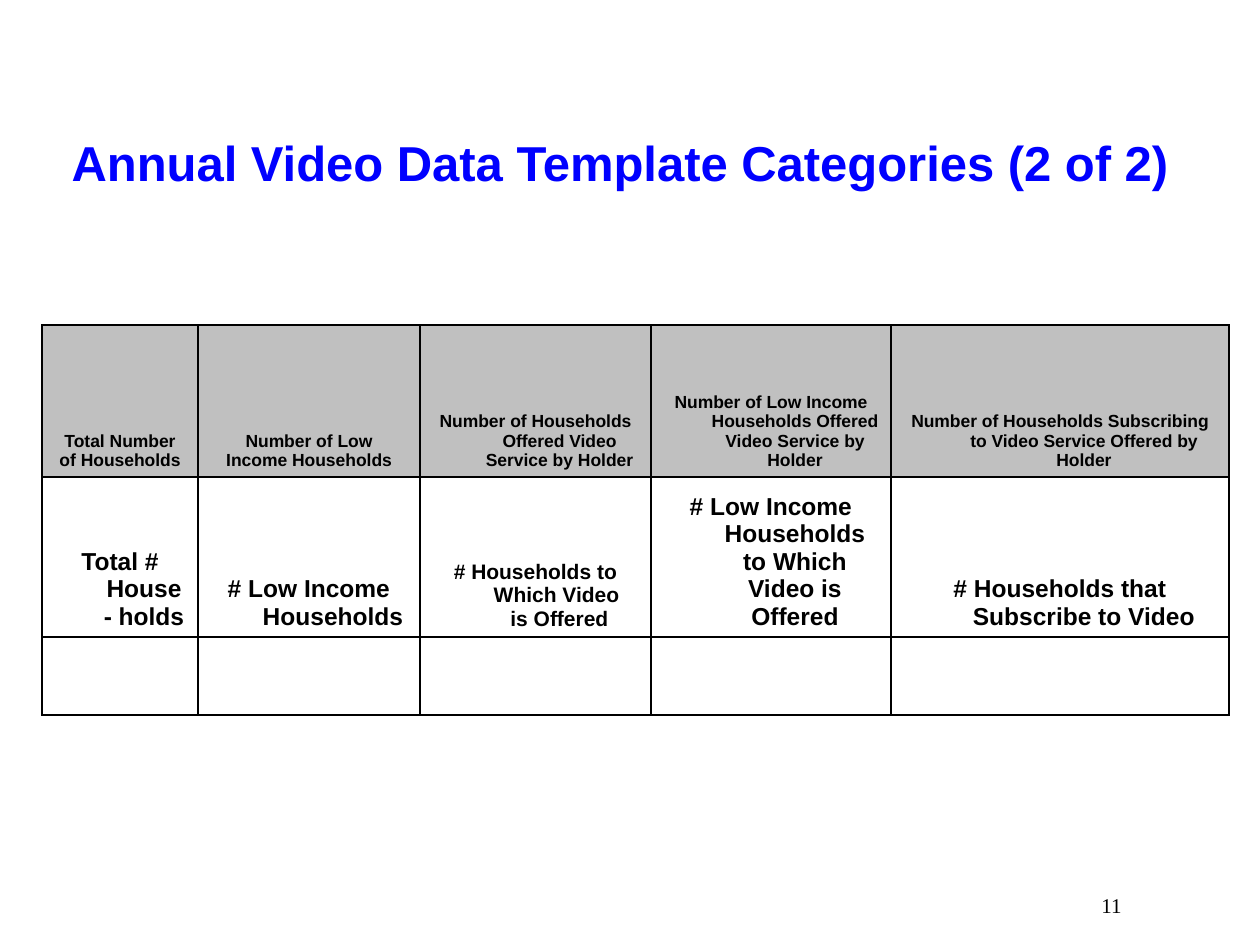
"""Build the slide that lists the annual video data template categories."""
from dataclasses import dataclass

from lxml.etree import SubElement
from pptx import Presentation
from pptx.dml.color import RGBColor
from pptx.enum.text import MSO_ANCHOR, PP_ALIGN
from pptx.oxml.ns import qn
from pptx.util import Pt

SCALE = 914400 / 126


@dataclass(frozen=True)
class Theme:
    sans: str = "Arial"
    serif: str = "Times New Roman"
    ink: str = "000000"
    blue: str = "0000FF"
    gray: str = "C0C0C0"
    title: int = 28
    head: int = 10
    body: int = 14
    small: int = 12
    rule: int = 1


@dataclass(frozen=True)
class Label:
    text: str
    box: tuple[int, int, int, int]
    face: str
    size: int
    color: str
    bold: bool
    align: PP_ALIGN
    anchor: MSO_ANCHOR


@dataclass(frozen=True)
class Column:
    width: int
    head: str
    entry: str
    size: int


THEME = Theme()
LABELS = (
    Label("11", (903, 861, 231, 63), THEME.serif, THEME.small, THEME.ink,
          False, PP_ALIGN.RIGHT, MSO_ANCHOR.BOTTOM),
    Label("Annual Video Data Template Categories (2 of 2)", (53, 126, 1134, 91),
          THEME.sans, THEME.title, THEME.blue, True, PP_ALIGN.CENTER, MSO_ANCHOR.TOP),
)
COLUMNS = (
    Column(156, "Total Number\nof Households", "Total # House- holds", THEME.body),
    Column(222, "Number of Low\nIncome Households", "# Low Income Households", THEME.body),
    Column(231, "Number of Households Offered Video Service by Holder",
           "# Households to Which Video \vis Offered", THEME.small),
    Column(240, "Number of Low Income Households Offered Video Service by Holder",
           "# Low Income Households to Which Video is Offered", THEME.body),
    Column(338, "Number of Households Subscribing to Video Service Offered by Holder",
           "# Households that Subscribe to Video", THEME.body),
)
ROWS = (152, 160, 78)
LEFT, TOP = 42, 325
INDENT = 48


def px(count: int) -> int:
    """Turn pixels into EMU."""
    return round(count * SCALE)


def style(frame, face: str, size: int, color: str, bold: bool, align: PP_ALIGN) -> None:
    """Format all paragraphs and runs of a text frame."""
    for para in frame.paragraphs:
        para.alignment = align
        for run in para.runs:
            font = run.font
            font.name, font.size, font.bold = face, Pt(size), bold
            font.color.rgb = RGBColor.from_string(color)


def draw_label(slide, label: Label) -> None:
    """Add one text box."""
    frame = slide.shapes.add_textbox(*map(px, label.box)).text_frame
    frame.word_wrap = True
    frame.vertical_anchor = label.anchor
    frame.text = label.text
    style(frame, label.face, label.size, label.color, label.bold, label.align)


def rule_cell(cell) -> None:
    """Draw the four borders of a cell."""
    props = cell._tc.get_or_add_tcPr()
    for side in ("a:lnL", "a:lnR", "a:lnT", "a:lnB"):
        line = SubElement(props, qn(side), w=str(Pt(THEME.rule)))
        fill = SubElement(line, qn("a:solidFill"))
        SubElement(fill, qn("a:srgbClr"), val=THEME.ink)


def draw_cell(cell, text: str, size: int, shade: bool) -> None:
    """Fill one table cell with bottom-aligned, hanging text."""
    rule_cell(cell)
    if shade:
        cell.fill.solid()
        cell.fill.fore_color.rgb = RGBColor.from_string(THEME.gray)
    else:
        cell.fill.background()
    if not text:
        return
    cell.vertical_anchor = MSO_ANCHOR.BOTTOM
    cell.text_frame.text = text
    for para in cell.text_frame.paragraphs:
        props = para._p.get_or_add_pPr()
        props.set("marL", str(px(INDENT)))
        props.set("indent", str(-px(INDENT)))
    style(cell.text_frame, THEME.sans, size, THEME.ink, True, PP_ALIGN.CENTER)


def draw_table(slide) -> None:
    """Add the table of categories."""
    width = sum(col.width for col in COLUMNS)
    box = map(px, (LEFT, TOP, width, sum(ROWS)))
    table = slide.shapes.add_table(len(ROWS), len(COLUMNS), *box).table
    table.first_row = table.horz_banding = False
    for row, height in zip(table.rows, ROWS):
        row.height = px(height)
    for place, col in enumerate(COLUMNS):
        table.columns[place].width = px(col.width)
        draw_cell(table.cell(0, place), col.head, THEME.head, True)
        draw_cell(table.cell(1, place), col.entry, col.size, False)
        draw_cell(table.cell(2, place), "", THEME.body, False)


def main() -> None:
    """Build and save the deck."""
    deck = Presentation()
    deck.slide_width, deck.slide_height = px(1260), px(945)
    slide = deck.slides.add_slide(deck.slide_layouts[6])
    for label in LABELS:
        draw_label(slide, label)
    draw_table(slide)
    deck.save("out.pptx")


if __name__ == "__main__":
    main()
